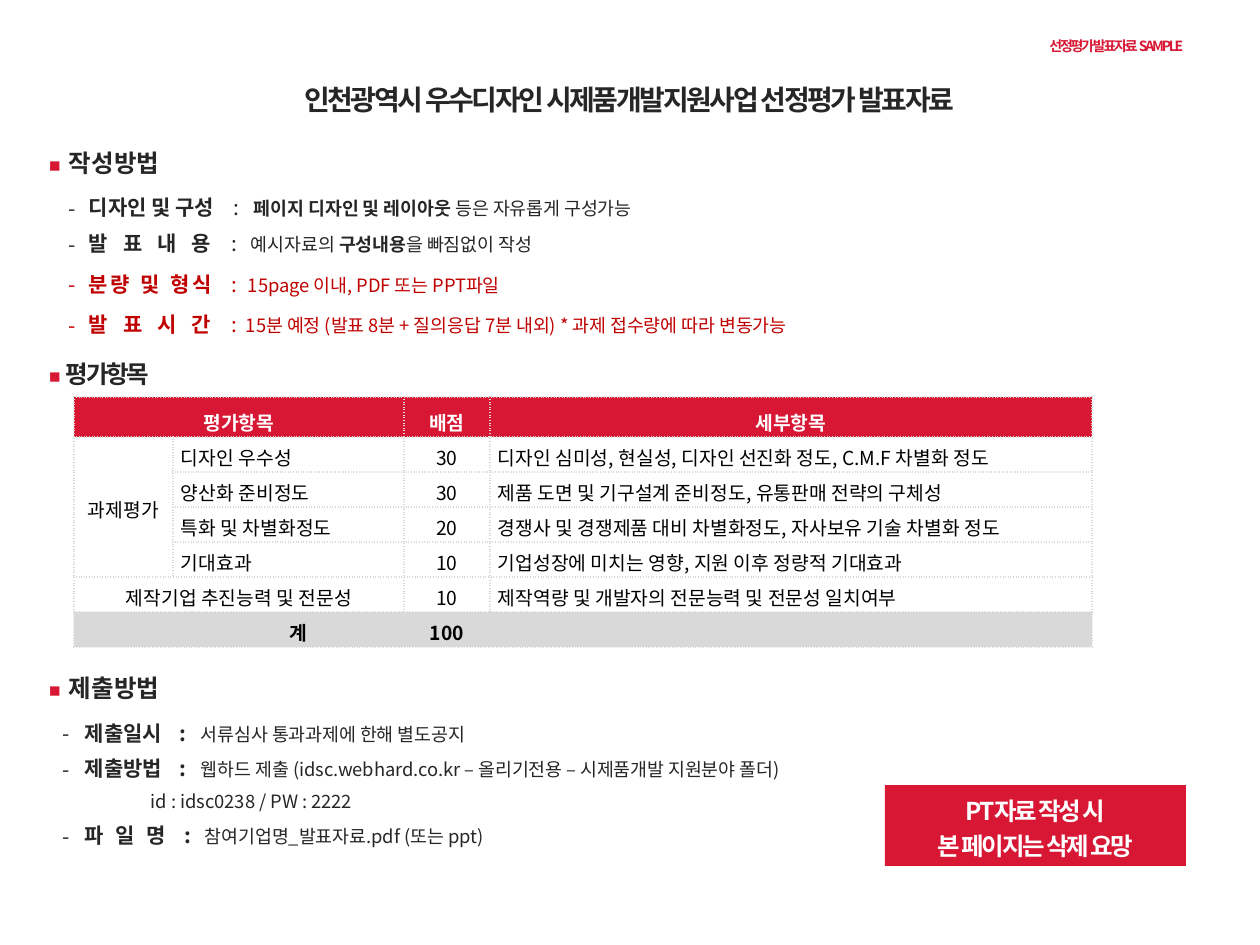
import lxml.etree
import pptx
import pptx.dml.color
import pptx.enum.shapes
import pptx.enum.text
import pptx.oxml.ns
import pptx.util

RGB = pptx.dml.color.RGBColor
ALIGN = pptx.enum.text.PP_ALIGN
MIDDLE = pptx.enum.text.MSO_ANCHOR.MIDDLE
FONT = "Noto Sans CJK KR"
CRIMSON = RGB(0xD7, 0x17, 0x33)
DARK_RED = RGB(0xC0, 0x00, 0x00)
INK = RGB(0x26, 0x26, 0x26)
BLACK = RGB(0x00, 0x00, 0x00)
WHITE = RGB(0xFF, 0xFF, 0xFF)
GREY = RGB(0xD9, 0xD9, 0xD9)

TITLE = "인천광역시 우수디자인 시제품개발지원사업 선정평가 발표자료"
TAG = "선정평가 발표자료 SAMPLE"
NOTICE = ["PT자료 작성 시", "본 페이지는 삭제 요망"]

# label, label spacing, tab stops, detail runs (text, bold), colour, line spacing, space before
GUIDE = [
    ("디자인 및 구성", 0, (185, 205),
     [("페이지 디자인 및 레이아웃 ", True), ("등은 자유롭게 구성가능", False)], INK, 1.5, 3),
    ("발 표 내 용", 2.9, (183, 202),
     [("예시자료의 ", False), ("구성내용", True), ("을 빠짐없이 작성", False)], INK, 1.2, 3),
    ("분량 및 형식", 1.6, (183, 199),
     [("15page 이내, PDF 또는 PPT파일", False)], DARK_RED, 1.2, 6),
    ("발 표 시 간", 2.9, (183, 197),
     [("15분 예정 (발표 8분 + 질의응답 7분 내외) * 과제 접수량에 따라 변동가능", False)],
     DARK_RED, 1.2, 6),
]
SUBMISSION = [
    ("제출일시", 0, (131, 152), [("서류심사 통과과제에 한해 별도공지", False)], INK, 1.5, 3),
    ("제출방법", 0, (131, 152),
     [("웹하드 제출 (idsc.webhard.co.kr – 올리기전용 – 시제품개발 지원분야 폴더)", False)],
     INK, 1.2, 3),
    ("", 0, (), [("id : idsc0238 / PW : 2222", False)], INK, 1.2, 3),
    ("파 일 명", 1.9, (136, 156),
     [("참여기업명_발표자료.pdf (또는 ppt)", False)], INK, 1.2, 3),
]
CRITERIA = [
    ("평가항목", "", "", "배점", "세부항목"),
    ("과제평가", "디자인 우수성", "", "30", "디자인 심미성, 현실성, 디자인 선진화 정도, C.M.F 차별화 정도"),
    ("", "양산화 준비정도", "", "30", "제품 도면 및 기구설계 준비정도, 유통판매 전략의 구체성"),
    ("", "특화 및 차별화정도", "", "20", "경쟁사 및 경쟁제품 대비 차별화정도, 자사보유 기술 차별화 정도"),
    ("", "기대효과", "", "10", "기업성장에 미치는 영향, 지원 이후 정량적 기대효과"),
    ("제작기업 추진능력 및 전문성", "", "", "10", "제작역량 및 개발자의 전문능력 및 전문성 일치여부"),
    ("", "", "계", "100", ""),
]
MERGES = [(0, 0, 0, 2), (1, 0, 4, 0), (5, 0, 5, 2), (6, 0, 6, 1)] + [
    (row, 1, row, 2) for row in range(1, 5)]
COLUMNS = [99, 19, 212, 86, 602]
ROWS = [40] + [35] * 6


def px(length):
    return pptx.util.Emu(round(length * 914400 / 126))


def element(parent, tag, **attributes):
    return lxml.etree.SubElement(parent, pptx.oxml.ns.qn("a:" + tag), attributes)


def write(paragraph, text, size=10.5, color=INK, bold=False, spacing=0):
    run = paragraph.add_run()
    run.text = text
    run.font.size = pptx.util.Pt(size)
    run.font.bold = bold
    run.font.name = FONT
    run.font.color.rgb = color
    properties = run.font._element
    element(properties, "ea", typeface=FONT)
    if spacing:
        properties.set("spc", str(round(spacing * 100)))


def next_paragraph(frame, line=1.0, before=0, align=ALIGN.LEFT):
    first = frame.paragraphs[0]
    paragraph = frame.add_paragraph() if first.runs else first
    paragraph.line_spacing = line
    paragraph.space_before = pptx.util.Pt(before if paragraph is not first else 0)
    paragraph.alignment = align
    return paragraph


def indent(paragraph, left, hanging, bullet=None, color=INK, tabs=()):
    properties = paragraph._p.get_or_add_pPr()
    properties.set("marL", str(px(left)))
    properties.set("indent", str(-px(hanging)))
    if bullet:
        element(element(properties, "buClr"), "srgbClr", val=str(color))
        element(properties, "buFont", typeface=FONT)
        element(properties, "buChar", char=bullet)
    if tabs:
        stops = element(properties, "tabLst")
        for tab in tabs:
            element(stops, "tab", pos=str(px(tab)), algn="l")


def prepare(shape, left, top, width, height):
    shape.left, shape.top, shape.width, shape.height = map(px, (left, top, width, height))
    frame = shape.text_frame
    frame.word_wrap = True
    frame.auto_size = pptx.enum.text.MSO_AUTO_SIZE.NONE
    frame.vertical_anchor = MIDDLE
    frame.margin_left = frame.margin_right = px(15)
    frame.margin_top = frame.margin_bottom = px(8)
    return frame


def add_text(slide, *box):
    return prepare(slide.shapes.add_textbox(0, 0, 0, 0), *box)


def add_heading(frame, text, line=1.0, left=20, spacing=0):
    paragraph = next_paragraph(frame, line)
    indent(paragraph, left, left, "◾", CRIMSON)
    write(paragraph, text, size=14, bold=True, spacing=spacing)


def add_items(frame, items, left, hanging, bold_mark):
    for label, spacing, tabs, details, color, line, before in items:
        paragraph = next_paragraph(frame, line, before)
        if label:
            indent(paragraph, left, hanging, "-", color, tabs)
            write(paragraph, label, size=12, color=color, bold=True, spacing=spacing)
            write(paragraph, "\t:\t", size=12, color=color, bold=bold_mark)
        else:
            indent(paragraph, 102, 0)
        for text, bold in details:
            write(paragraph, text, color=color, bold=bold)


def add_criteria(slide):
    frame = slide.shapes.add_table(len(ROWS), len(COLUMNS), px(74), px(397),
                                   px(sum(COLUMNS)), px(sum(ROWS)))
    table = frame.table
    table.first_row = table.horz_banding = False
    for column, width in zip(table.columns, COLUMNS):
        column.width = px(width)
    for row, height in zip(table.rows, ROWS):
        row.height = px(height)
    for r, texts in enumerate(CRITERIA):
        header, total = r == 0, r == len(CRITERIA) - 1
        for c, text in enumerate(texts):
            cell = table.cell(r, c)
            left_aligned = not header and not total and c in (1, 4)
            cell.margin_left = px(8 if left_aligned else 2)
            cell.margin_right = cell.margin_top = px(2)
            cell.margin_bottom = 0
            cell.vertical_anchor = MIDDLE
            for side in ("lnL", "lnR", "lnT", "lnB"):
                border = element(cell._tc.get_or_add_tcPr(), side, w="12700")
                element(element(border, "solidFill"), "srgbClr", val=str(GREY))
                element(border, "prstDash", val="sysDot")
            cell.fill.solid()
            cell.fill.fore_color.rgb = CRIMSON if header else GREY if total else WHITE
            paragraph = next_paragraph(cell.text_frame, 1.3 if header else 1.1,
                                       align=ALIGN.LEFT if left_aligned else ALIGN.CENTER)
            if text:
                write(paragraph, text, size=11, color=WHITE if header else BLACK,
                      bold=header or total)
            else:
                paragraph.font.size = pptx.util.Pt(11)
    for top, left, bottom, right in MERGES:
        table.cell(top, left).merge(table.cell(bottom, right))


def main():
    deck = pptx.Presentation()
    deck.slide_width, deck.slide_height = px(1260), px(945)
    slide = deck.slides.add_slide(deck.slide_layouts[5])

    title = prepare(slide.shapes.title, 166, 67, 927, 58)
    write(next_paragraph(title, 1.2, align=ALIGN.CENTER), TITLE, size=16, bold=True, spacing=-1.3)

    guide = add_text(slide, 34, 116, 1154, 238)
    add_heading(guide, "작성방법", 1.5)
    add_items(guide, GUIDE, 40, 20, False)

    submission = add_text(slide, 34, 640, 829, 226)
    add_heading(submission, "제출방법", 1.5)
    add_items(submission, SUBMISSION, 36, 22, True)

    notice = slide.shapes.add_shape(pptx.enum.shapes.MSO_SHAPE.RECTANGLE, 0, 0, 0, 0)
    notice.shadow.inherit = False
    notice.fill.solid()
    notice.fill.fore_color.rgb = CRIMSON
    notice.line.fill.background()
    notice_frame = prepare(notice, 885, 785, 301, 81)
    for text in NOTICE:
        write(next_paragraph(notice_frame, 1.2, align=ALIGN.CENTER), text,
              size=14, color=WHITE, bold=True, spacing=-1.3)

    add_heading(add_text(slide, 34, 344, 1201, 59), "평가항목", left=17, spacing=-1.3)
    add_criteria(slide)

    tag = add_text(slide, 1027, 31, 179, 30)
    write(next_paragraph(tag, align=ALIGN.CENTER), TAG, size=8, color=CRIMSON,
          bold=True, spacing=-1.3)
    deck.save("out.pptx")


if __name__ == "__main__":
    main()
